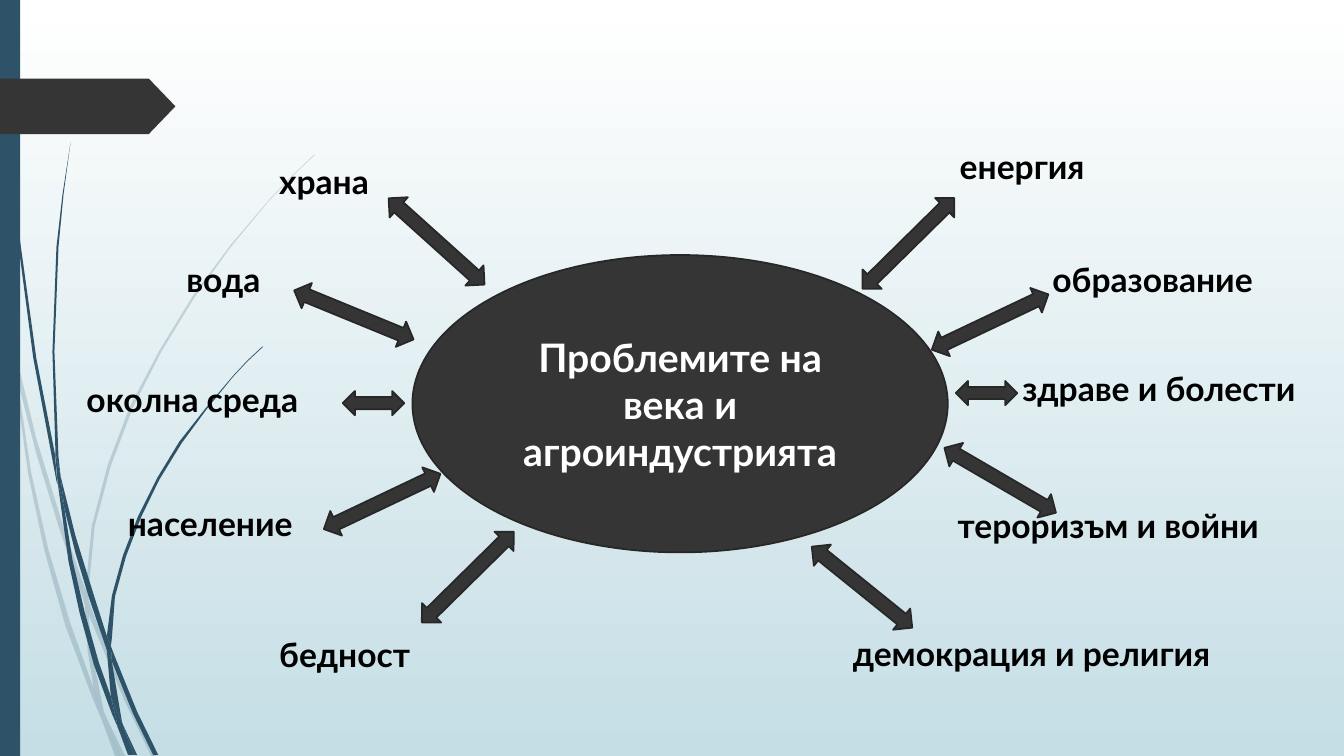
from dataclasses import dataclass
from lxml.etree import SubElement
from pptx import Presentation
from pptx.dml.color import RGBColor
from pptx.enum.shapes import MSO_SHAPE
from pptx.enum.text import MSO_ANCHOR, MSO_AUTO_SIZE, PP_ALIGN
from pptx.oxml.ns import qn
from pptx.util import Emu, Inches, Pt

COLUMNS, ROWS = 13.33, 7.5
CELL = Inches(1)
FONT = "Lato"
BLUE, CHARCOAL, EDGE = "2E5369", "353535", "272727"


@dataclass(frozen=True)
class Grass:
    opacity: int
    blades: list[list[tuple[float, float]]]


@dataclass(frozen=True)
class Problem:
    name: str
    column: float
    row: float
    width: float
    inset: float = 0.1


@dataclass(frozen=True)
class Arrow:
    column: float
    row: float
    angle: float = 0
    length: float = 1.28
    thickness: float = 0.27


FAINT_GRASS = Grass(20, [
    [(0.11, 3.5), (0.09, 3.22), (0, 2.82), (0, 2.99), (0.1, 3.44)],
    [(0.58, 5.22), (0.84, 5.99), (0.85, 5.86), (0.62, 5.2), (0.36, 4.35), (0.14, 3.45),
     (0.17, 3.76), (0.36, 4.5)],
    [(0.92, 6.07), (0.88, 5.96), (0.88, 6.1), (1.23, 6.94), (1.5, 7.5), (1.55, 7.5), (1.27, 6.92)],
    [(1.19, 7.5), (1.24, 7.5), (1.05, 7.11)],
    [(0.93, 6.83), (0.7, 6.19), (0.48, 5.45), (0.31, 4.69), (0.17, 3.76), (0.11, 3.5),
     (0.28, 4.7), (0.44, 5.46), (0.65, 6.21), (0.92, 6.93), (1.01, 7.14), (0.99, 7.07)],
    [(0.84, 5.99), (0.87, 6.46), (0.93, 6.83), (0.96, 6.92), (1.05, 7.11), (1.03, 7.06),
     (0.91, 6.46), (0.88, 6.1), (0.88, 6.08)],
    [(0.88, 5.84), (0.94, 5.22), (1.1, 4.62), (1.32, 4.04), (1.6, 3.49), (1.93, 2.95),
     (2.29, 2.45), (2.68, 1.98), (2.9, 1.75), (3.12, 1.54), (3.12, 1.53), (2.89, 1.75),
     (2.68, 1.97), (2.28, 2.44), (1.91, 2.94), (1.58, 3.48), (1.29, 4.03), (1.07, 4.61),
     (0.91, 5.22), (0.85, 5.84), (0.85, 5.86), (0.88, 5.96)],
    [(1.01, 7.14), (1.14, 7.5), (1.19, 7.5)],
    [(0.88, 6.08), (0.88, 6.1), (0.88, 5.96), (0.85, 5.86), (0.84, 5.99)],
    [(0.96, 6.92), (0.93, 6.83), (0.99, 7.07), (1.01, 7.14), (1.19, 7.5), (1.05, 7.11)],
])

BOLD_GRASS = Grass(100, [
    [(0.07, 1.1), (0.17, 2.33), (0.33, 3.55), (0.56, 4.77), (0.57, 4.81), (0.55, 4.57),
     (0.55, 4.53), (0.36, 3.55), (0.19, 2.32), (0.08, 1.09), (0.05, 0.48), (0.04, 0),
     (0.03, 0), (0.04, 0.48)],
    [(0.88, 5.92), (1.06, 6.45), (1.06, 6.33), (1.06, 6.31), (0.93, 5.9), (0.75, 5.32),
     (0.6, 4.72), (0.64, 5.05), (0.75, 5.49)],
    [(1.13, 6.49), (1.1, 6.41), (1.11, 6.56), (1.32, 7.08), (1.52, 7.49), (1.57, 7.49), (1.36, 7.06)],
    [(1.1, 6.91), (0.98, 6.57), (0.84, 6.07), (0.72, 5.56), (0.64, 5.05), (0.57, 4.77),
     (0.68, 5.57), (0.79, 6.08), (0.93, 6.59), (1.11, 7.08), (1.17, 7.22), (1.16, 7.17)],
    [(0.6, 4.72), (0.58, 4.53), (0.54, 3.49), (0.58, 2.45), (0.63, 1.93), (0.7, 1.41),
     (0.62, 1.93), (0.56, 2.45), (0.52, 3.49), (0.55, 4.49)],
    [(1.33, 7.49), (1.36, 7.49), (1.22, 7.19)],
    [(0.57, 4.77), (0.64, 5.05), (0.6, 4.72), (0.55, 4.49), (0.55, 4.53)],
    [(1.11, 6.33), (1.14, 5.92), (1.25, 5.52), (1.4, 5.13), (1.58, 4.76), (1.8, 4.4),
     (2.05, 4.06), (2.31, 3.74), (2.45, 3.59), (2.61, 3.44), (2.6, 3.44), (2.45, 3.58),
     (2.31, 3.73), (2.04, 4.05), (1.78, 4.38), (1.56, 4.74), (1.37, 5.12), (1.22, 5.51),
     (1.11, 5.91), (1.06, 6.31), (1.1, 6.41)],
    [(1.17, 7.22), (1.27, 7.49), (1.31, 7.49)],
    [(1.06, 6.45), (1.1, 6.91), (1.16, 7.06), (1.22, 7.19), (1.21, 7.16), (1.11, 6.56), (1.09, 6.51)],
    [(1.06, 6.45), (1.09, 6.51), (1.11, 6.56), (1.1, 6.41), (1.06, 6.31), (1.06, 6.33)],
    [(1.16, 7.06), (1.1, 6.91), (1.16, 7.17), (1.17, 7.22), (1.3, 7.49), (1.33, 7.49), (1.22, 7.19)],
])

PROBLEMS = [
    Problem("храна", 2.67, 1.55, 1.24),
    Problem("вода", 1.75, 2.52, 1.03),
    Problem("околна среда", 0.76, 3.71, 2.57),
    Problem("население", 1.17, 4.94, 2.06),
    Problem("бедност", 2.67, 6.24, 1.61),
    Problem("енергия", 9.42, 1.4, 1.63),
    Problem("образование", 10.34, 2.52, 2.47),
    Problem("здраве и болести", 10.14, 3.6, 3.04, inset=0),
    Problem("тероризъм и войни", 9.4, 4.96, 3.57),
    Problem("демокрация и религия", 8.36, 6.23, 4.2),
]

ARROWS = [
    Arrow(3.69, 2.26, 42), Arrow(2.87, 2.99, 22.3),
    Arrow(4, 5.59, -44.6), Arrow(3.15, 4.84, -25.4),
    Arrow(9.28, 4.63, 30.2), Arrow(7.91, 5.69, 38.9),
    Arrow(8.37, 2.28, -44.6), Arrow(9.18, 3.06, -25.4),
    Arrow(3.4, 3.88, length=0.61, thickness=0.24),
    Arrow(9.48, 3.78, length=0.61, thickness=0.24),
]


def grid(cells: float) -> Emu:
    return Emu(round(cells * CELL))


def colour(value: str) -> RGBColor:
    return RGBColor.from_string(value)


def paint(shape, fill: str, line: str | None = None) -> None:
    shape.shadow.inherit = False
    shape.fill.solid()
    shape.fill.fore_color.rgb = colour(fill)
    if line:
        shape.line.color.rgb = colour(line)
        shape.line.width = Pt(1.25)
    else:
        shape.line.fill.background()


def add_preset(slide, preset, column: float, row: float, width: float, height: float,
               fill: str, line: str | None = None):
    shape = slide.shapes.add_shape(preset, *map(grid, (column, row, width, height)))
    paint(shape, fill, line)
    return shape


def write(paragraph, text: str, size: int, ink: str) -> None:
    run = paragraph.add_run()
    run.text = text
    run.font.name = FONT
    run.font.size = Pt(size)
    run.font.bold = True
    run.font.color.rgb = colour(ink)


def draw_grass(slide, grass: Grass) -> None:
    for blade in grass.blades:
        start, *outline = [(grid(x), grid(y)) for x, y in blade]
        builder = slide.shapes.build_freeform(*start)
        builder.add_line_segments(outline, close=True)
        shape = builder.convert_to_shape()
        paint(shape, BLUE)
        if grass.opacity < 100:
            tint = shape.fill._xPr.find(qn("a:solidFill"))[0]
            SubElement(tint, qn("a:alpha"), val=str(grass.opacity * 1000))


def draw_problem(slide, problem: Problem) -> None:
    label = slide.shapes.add_textbox(
        *map(grid, (problem.column, problem.row, problem.width, 0.5)))
    frame = label.text_frame
    frame.word_wrap = False
    frame.auto_size = MSO_AUTO_SIZE.SHAPE_TO_FIT_TEXT
    frame.margin_left = frame.margin_right = grid(problem.inset)
    write(frame.paragraphs[0], problem.name, 24, "000000")


def draw_arrow(slide, arrow: Arrow) -> None:
    shape = add_preset(slide, MSO_SHAPE.LEFT_RIGHT_ARROW, arrow.column, arrow.row,
                       arrow.length, arrow.thickness, CHARCOAL, EDGE)
    shape.rotation = arrow.angle


def draw_topic(slide) -> None:
    topic = add_preset(slide, MSO_SHAPE.OVAL, 4.09, 2.53, 5.31, 2.95, CHARCOAL, EDGE)
    topic.text_frame.word_wrap = True
    topic.text_frame.vertical_anchor = MSO_ANCHOR.MIDDLE
    title = topic.text_frame.paragraphs[0]
    title.alignment = PP_ALIGN.CENTER
    write(title, "Проблемите на века и агроиндустрията", 28, "FFFFFF")


def draw_background(slide) -> None:
    sky = slide.background.fill
    sky.gradient()
    sky.gradient_angle = 270
    for stop, tone in zip(sky.gradient_stops, ("FFFFFF", "C5DEE5")):
        stop.color.rgb = colour(tone)


def main() -> None:
    deck = Presentation()
    deck.slide_width, deck.slide_height = grid(COLUMNS), grid(ROWS)
    slide = deck.slides.add_slide(deck.slide_layouts[6])
    draw_background(slide)
    for grass in (FAINT_GRASS, BOLD_GRASS):
        draw_grass(slide, grass)
    add_preset(slide, MSO_SHAPE.RECTANGLE, 0, 0, 0.2, ROWS, BLUE)
    flag = add_preset(slide, MSO_SHAPE.PENTAGON, 0, 0.78, 1.74, 0.55, CHARCOAL)
    flag.adjustments[0] = 0.48
    draw_topic(slide)
    for problem in PROBLEMS:
        draw_problem(slide, problem)
    for arrow in ARROWS:
        draw_arrow(slide, arrow)
    deck.save("out.pptx")


if __name__ == "__main__":
    main()
